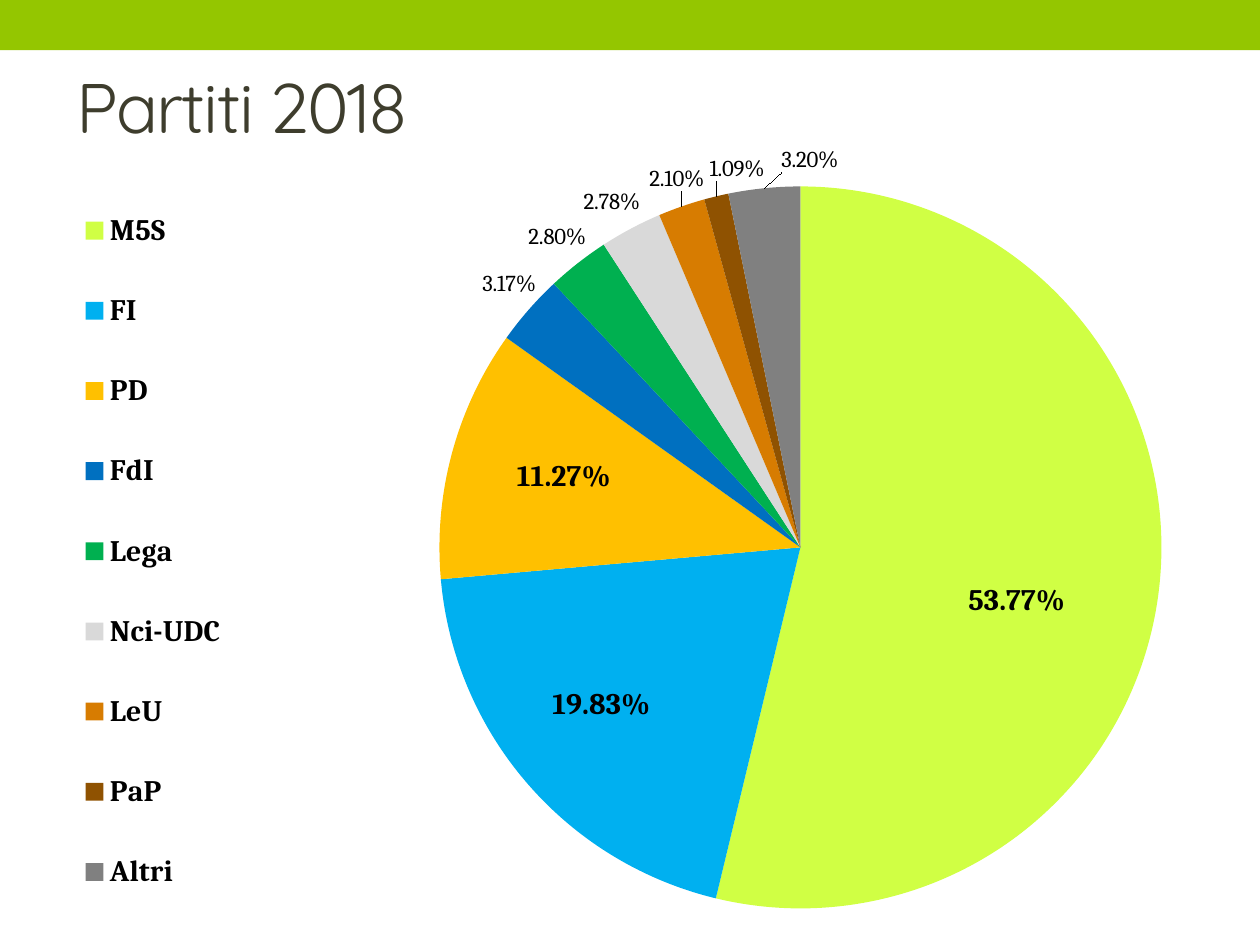
from dataclasses import dataclass

import lxml.etree
import pptx
import pptx.chart.data
import pptx.dml.color
import pptx.enum.chart
import pptx.enum.shapes
import pptx.enum.text
import pptx.oxml.ns
import pptx.util


@dataclass(frozen=True)
class Theme:
    bar: str = "94C600"
    title: str = "3E3D2D"
    text: str = "000000"
    title_font: str = "Quicksand"
    chart_font: str = "Cambria"
    title_size: int = 40
    chart_size: int = 17
    small_size: int = 13


THEME = Theme()
WIDTH = pptx.util.Inches(10)
HEIGHT = pptx.util.Inches(7.5)
LARGE_SHARE = 0.1

PARTIES = [
    ("M5S", 0.5377, "D0FF44", (0.03, 0.04)),
    ("FI", 0.1983, "00B0F0", (-0.05, 0.05)),
    ("PD", 0.1127, "FFC000", (-0.05, -0.03)),
    ("FdI", 0.0317, "0070C0", (0.01, -0.01)),
    ("Lega", 0.028, "00B050", (0.01, -0.01)),
    ("Nci-UDC", 0.0278, "D9D9D9", (0.01, -0.01)),
    ("LeU", 0.021, "D77C01", (0.02, -0.01)),
    ("PaP", 0.0109, "8F5201", (0.04, -0.01)),
    ("Altri", 0.032, "808080", (0.06, -0.01)),
]


def rgb(value):
    return pptx.dml.color.RGBColor.from_string(value)


def box(left, top, width, height):
    return [
        round(left * WIDTH),
        round(top * HEIGHT),
        round(width * WIDTH),
        round(height * HEIGHT),
    ]


def style_font(font, name, size, color, bold=False):
    font.name = name
    font.size = pptx.util.Pt(size)
    font.bold = bold
    font.color.rgb = rgb(color)


def add_bar(slide):
    shape = slide.shapes.add_shape(
        pptx.enum.shapes.MSO_SHAPE.RECTANGLE, *box(0, 0, 1, 0.053)
    )
    shape.shadow.inherit = False
    shape.fill.solid()
    shape.fill.fore_color.rgb = rgb(THEME.bar)
    shape.line.fill.background()


def fill_title(slide, text):
    title = slide.shapes.title
    title.left, title.top, title.width, title.height = box(0.051, 0.04, 0.9, 0.144)
    title.text_frame.text = text
    title.text_frame.vertical_anchor = pptx.enum.text.MSO_ANCHOR.MIDDLE
    paragraph = title.text_frame.paragraphs[0]
    paragraph.alignment = pptx.enum.text.PP_ALIGN.LEFT
    style_font(paragraph.font, THEME.title_font, THEME.title_size, THEME.title)
    paragraph.runs[0].font._element.set("spc", "-100")


def set_layout(parent, after, inner=False, **shares):
    qn = pptx.oxml.ns.qn
    for old in parent.findall(qn("c:layout")):
        parent.remove(old)
    layout = parent.makeelement(qn("c:layout"))
    manual = lxml.etree.SubElement(layout, qn("c:manualLayout"))
    settings = {"layoutTarget": "inner"} if inner else {}
    if "w" in shares:
        settings.update(xMode="edge", yMode="edge")
    settings.update(shares)
    for tag, value in settings.items():
        lxml.etree.SubElement(manual, qn(f"c:{tag}")).set("val", str(value))
    if after is None:
        parent.insert(0, layout)
    else:
        parent.find(qn(after)).addnext(layout)


def add_pie(slide):
    data = pptx.chart.data.CategoryChartData(number_format="0.00%")
    data.categories = [name for name, _, _, _ in PARTIES]
    data.add_series("Series 1", [share for _, share, _, _ in PARTIES])
    chart = slide.shapes.add_chart(
        pptx.enum.chart.XL_CHART_TYPE.PIE, *box(0.003, 0.153, 0.988, 0.836), data
    ).chart
    chart.has_title = False
    style_font(chart.font, THEME.chart_font, THEME.chart_size, THEME.text)
    plot = chart.plots[0]
    plot.vary_by_categories = True
    color_slices(plot.series[0])
    label_slices(chart, plot)
    add_legend(chart)
    plot_area = chart.element.xpath("c:chart/c:plotArea")[0]
    set_layout(plot_area, None, inner=True, x=0.35, y=0.04, w=0.58, h=0.94)


def color_slices(series):
    for index, (_, _, color, _) in enumerate(PARTIES):
        fill = series.points[index].format.fill
        fill.solid()
        fill.fore_color.rgb = rgb(color)


def label_slices(chart, plot):
    plot.has_data_labels = True
    labels = plot.data_labels
    labels.show_value = True
    labels.show_percentage = False
    labels.number_format = "0.00%"
    labels.number_format_is_linked = False
    positions = pptx.enum.chart.XL_LABEL_POSITION
    for index, (_, share, _, _) in enumerate(PARTIES):
        large = share > LARGE_SHARE
        label = plot.series[0].points[index].data_label
        size = THEME.chart_size if large else THEME.small_size
        style_font(label.font, THEME.chart_font, size, THEME.text, bold=large)
        label.position = positions.CENTER if large else positions.OUTSIDE_END
    for element, party in zip(chart.element.xpath(".//c:dLbl"), PARTIES):
        x, y = party[-1]
        set_layout(element, "c:idx", x=x, y=y)


def add_legend(chart):
    chart.has_legend = True
    legend = chart.legend
    legend.position = pptx.enum.chart.XL_LEGEND_POSITION.BOTTOM
    legend.include_in_layout = False
    style_font(
        legend.font, THEME.chart_font, THEME.chart_size, THEME.text, bold=True
    )
    element = chart.element.xpath("c:chart/c:legend")[0]
    set_layout(element, "c:legendPos", x=0.05, y=0.03, w=0.14, h=0.97)


def main():
    presentation = pptx.Presentation()
    presentation.slide_width = WIDTH
    presentation.slide_height = HEIGHT
    slide = presentation.slides.add_slide(presentation.slide_layouts[5])
    add_bar(slide)
    fill_title(slide, "Partiti 2018")
    add_pie(slide)
    presentation.save("out.pptx")


if __name__ == "__main__":
    main()
